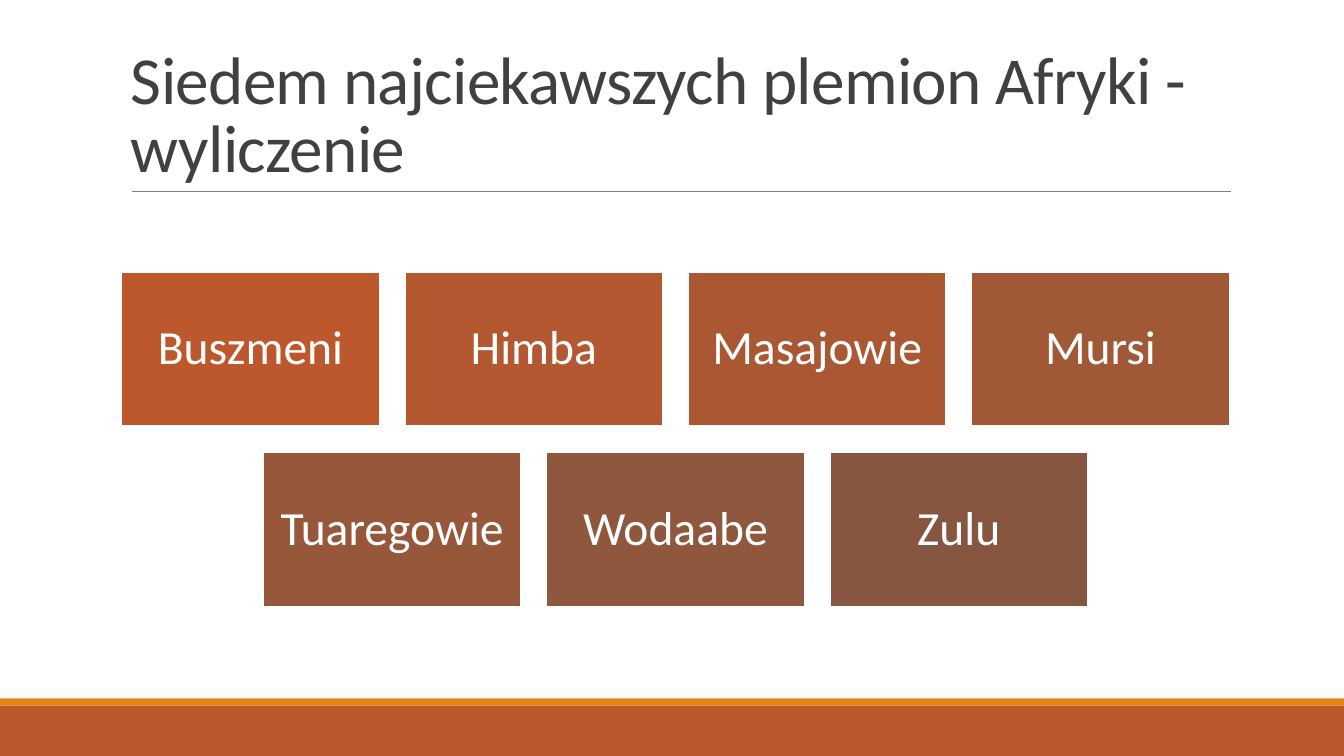
from dataclasses import dataclass

from lxml.etree import SubElement
from pptx import Presentation
from pptx.dml.color import RGBColor
from pptx.enum.shapes import MSO_CONNECTOR, MSO_SHAPE
from pptx.enum.text import MSO_ANCHOR, PP_ALIGN
from pptx.oxml.ns import qn
from pptx.util import Inches, Pt


@dataclass(frozen=True)
class Theme:
    font: str = "Calibri"
    title_size: float = 48
    tile_size: float = 34
    title: str = "404040"
    white: str = "FFFFFF"
    rule: str = "808080"
    footer: str = "BD582C"
    stripe: str = "E48312"


class SlideBuilder:
    def __init__(self, slide, theme):
        self.slide = slide
        self.theme = theme

    def fill_text(self, shape, text, size, color, spacing, anchor, inset=None):
        frame = shape.text_frame
        frame.word_wrap = True
        frame.vertical_anchor = anchor
        if inset is not None:
            frame.margin_left = frame.margin_right = Inches(inset)
            frame.margin_top = frame.margin_bottom = Inches(inset)
        paragraph = frame.paragraphs[0]
        paragraph.text = text
        paragraph.line_spacing = spacing
        paragraph.font.name = self.theme.font
        paragraph.font.size = Pt(size)
        paragraph.font.color.rgb = RGBColor.from_string(color)
        return paragraph

    def rectangle(self, left, top, width, height, fill, outline=None):
        shape = self.slide.shapes.add_shape(
            MSO_SHAPE.RECTANGLE, Inches(left), Inches(top), Inches(width), Inches(height)
        )
        shape.shadow.inherit = False
        shape.fill.solid()
        shape.fill.fore_color.rgb = RGBColor.from_string(fill)
        if outline:
            shape.line.color.rgb = RGBColor.from_string(outline)
            shape.line.width = Pt(1.25)
        else:
            shape.line.fill.background()
        return shape

    def rule(self, left, right, top):
        line = self.slide.shapes.add_connector(
            MSO_CONNECTOR.STRAIGHT, Inches(left), Inches(top), Inches(right), Inches(top)
        )
        line.line.color.rgb = RGBColor.from_string(self.theme.rule)
        line.line.width = Pt(0.5)
        SubElement(line._element.spPr, qn("a:effectLst"))

    def title(self, text, left, top, width, height):
        box = self.slide.shapes.add_textbox(
            Inches(left), Inches(top), Inches(width), Inches(height)
        )
        paragraph = self.fill_text(
            box, text, self.theme.title_size, self.theme.title, 0.85, MSO_ANCHOR.BOTTOM
        )
        paragraph.runs[0]._r.get_or_add_rPr().set("spc", "-50")

    def tile(self, text, left, top, width, height, fill):
        shape = self.rectangle(left, top, width, height, fill, self.theme.white)
        paragraph = self.fill_text(
            shape, text, self.theme.tile_size, self.theme.white, 0.9, MSO_ANCHOR.MIDDLE, 0.14
        )
        paragraph.alignment = PP_ALIGN.CENTER

    def tile_rows(self, rows, center, top, width, height, pitch_x, pitch_y):
        for row_index, row in enumerate(rows):
            left = center - ((len(row) - 1) * pitch_x + width) / 2
            for column, (text, fill) in enumerate(row):
                self.tile(
                    text, left + column * pitch_x, top + row_index * pitch_y, width, height, fill
                )


TRIBES = [
    [("Buszmeni", "BD582C"), ("Himba", "B35830"), ("Masajowie", "AA5834"), ("Mursi", "A05837")],
    [("Tuaregowie", "97573A"), ("Wodaabe", "8F573D"), ("Zulu", "865640")],
]


def main():
    presentation = Presentation()
    presentation.slide_width = Inches(13.33)
    presentation.slide_height = Inches(7.5)
    theme = Theme()
    builder = SlideBuilder(presentation.slides.add_slide(presentation.slide_layouts[6]), theme)
    builder.rectangle(0, 7, 13.33, 0.5, theme.footer)
    builder.rectangle(0, 6.93, 13.33, 0.07, theme.stripe)
    builder.rule(1.31, 12.21, 1.9)
    builder.title("Siedem najciekawszych plemion Afryki - wyliczenie", 1.2, 0.31, 11, 1.59)
    builder.tile_rows(TRIBES, 6.7, 2.7, 2.56, 1.53, 2.81, 1.79)
    presentation.save("out.pptx")


if __name__ == "__main__":
    main()
